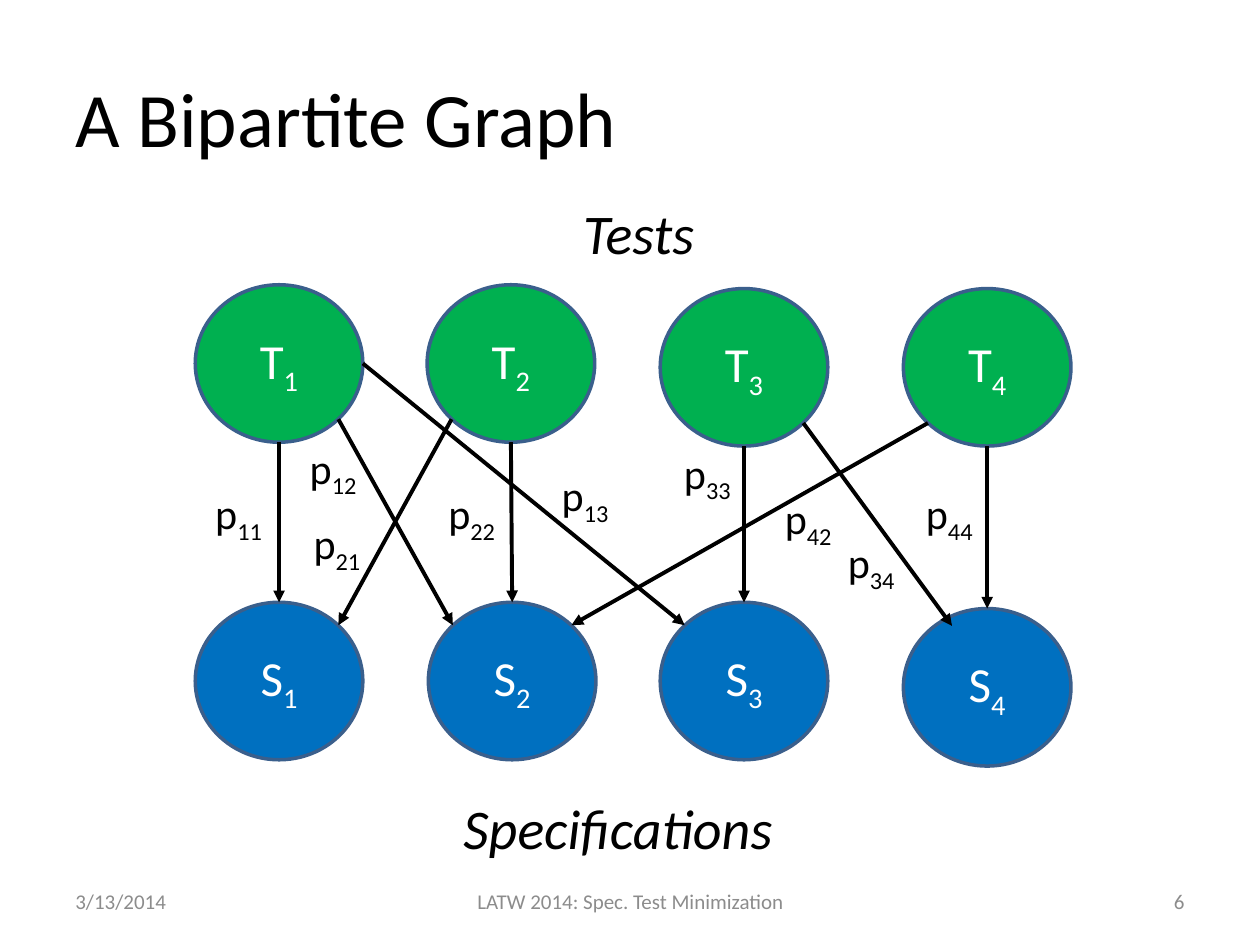
from lxml import etree
from pptx import Presentation
from pptx.dml.color import RGBColor
from pptx.enum import shapes, text
from pptx.oxml import ns
from pptx.util import Inches, Pt

BLACK = RGBColor(0x00, 0x00, 0x00)
WHITE = RGBColor(0xFF, 0xFF, 0xFF)
GRAY = RGBColor(0x8C, 0x8C, 0x8C)
GREEN = RGBColor(0x00, 0xB0, 0x50)
BLUE = RGBColor(0x00, 0x70, 0xC0)
OUTLINE = RGBColor(0x3A, 0x5F, 0x8C)
FONT = "Calibri"
LEFT, CENTER, RIGHT = text.PP_ALIGN.LEFT, text.PP_ALIGN.CENTER, text.PP_ALIGN.RIGHT

# Content: node name -> left, top
TITLE = "A Bipartite Graph"
NODES = {
    "T1": (1.55, 2.26), "T2": (3.39, 2.26), "T3": (5.24, 2.29), "T4": (7.17, 2.29),
    "S1": (1.55, 4.78), "S2": (3.4, 4.78), "S3": (5.24, 4.78), "S4": (7.17, 4.83),
}
NODE_FILLS = {"T": GREEN, "S": BLUE}
NODE_W, NODE_H = 1.33, 1.25

# Points on a node, as fractions of its width and height
DIAGONAL = 0.146
SITES = {
    "top": (0.5, 0), "bottom": (0.5, 1), "right": (1, 0.5),
    "top left": (DIAGONAL, DIAGONAL), "top right": (1 - DIAGONAL, DIAGONAL),
    "bottom left": (DIAGONAL, 1 - DIAGONAL),
    "bottom right": (1 - DIAGONAL, 1 - DIAGONAL),
    "inner left": (0.29, 0.11),
}

# Test, its site, specification, its site, left and top of the label
EDGES = [
    ("T1", "bottom", "S1", "top", 1.61, 3.82),
    ("T2", "bottom", "S2", "top", 3.46, 3.82),
    ("T3", "bottom", "S3", "top", 5.33, 3.5),
    ("T4", "bottom", "S4", "top", 7.25, 3.82),
    ("T1", "bottom right", "S2", "top left", 2.36, 3.46),
    ("T1", "right", "S3", "top left", 4.36, 3.68),
    ("T2", "bottom left", "S1", "top right", 2.39, 4.06),
    ("T3", "bottom right", "S4", "inner left", 6.63, 4.21),
    ("T4", "bottom left", "S2", "top right", 6.13, 3.86),
]
HEADINGS = [("Tests", 4.53, 1.53, 1.22), ("Specifications", 3.58, 6.25, 2.76)]
FOOTERS = [
    ("3/13/2014", 0.5, 2.33, LEFT),
    ("LATW 2014: Spec. Test Minimization", 3.42, 3.17, CENTER),
    ("6", 7.17, 2.33, RIGHT),
]


def write(frame, words, size, color, align=LEFT, subscript="", italic=None):
    para = frame.paragraphs[0]
    para.alignment = align
    for part in filter(None, (words, subscript)):
        span = para.add_run()
        span.text = part
        span.font.name, span.font.size = FONT, Pt(size)
        span.font.color.rgb, span.font.italic = color, italic
    if subscript:
        span._r.get_or_add_rPr().set("baseline", "-25000")


def add_box(page, left, top, width, height, wrap=True, grow=True):
    box = page.shapes.add_textbox(*map(Inches, (left, top, width, height)))
    frame = box.text_frame
    frame.word_wrap = wrap
    if grow:
        frame.auto_size = text.MSO_AUTO_SIZE.SHAPE_TO_FIT_TEXT
    else:
        frame.vertical_anchor = text.MSO_ANCHOR.MIDDLE
    return frame


def add_node(page, name, left, top):
    node = page.shapes.add_shape(
        shapes.MSO_SHAPE.OVAL, *map(Inches, (left, top, NODE_W, NODE_H)))
    node.shadow.inherit = False
    node.fill.solid()
    node.fill.fore_color.rgb = NODE_FILLS[name[0]]
    node.line.color.rgb, node.line.width = OUTLINE, Pt(2)
    node.text_frame.vertical_anchor = text.MSO_ANCHOR.MIDDLE
    write(node.text_frame, name[0], 28, WHITE, CENTER, name[1])


def site_point(name, site):
    (left, top), (across, down) = NODES[name], SITES[site]
    return Inches(left + across * NODE_W), Inches(top + down * NODE_H)


def add_arrow(page, start, end):
    arrow = page.shapes.add_connector(shapes.MSO_CONNECTOR.STRAIGHT, *start, *end)
    arrow.line.color.rgb, arrow.line.width = BLACK, Pt(2.25)
    properties = arrow._element.spPr
    etree.SubElement(properties.get_or_add_ln(), ns.qn("a:tailEnd"), type="triangle")
    etree.SubElement(properties, ns.qn("a:effectLst"))


def main():
    deck = Presentation()
    deck.slide_width, deck.slide_height = Inches(10), Inches(7.5)
    page = deck.slides.add_slide(deck.slide_layouts[5])

    # Title
    title = page.shapes.title
    title.left, title.top = Inches(0.5), Inches(0.3)
    title.width, title.height = Inches(9), Inches(1.25)
    title.text_frame.vertical_anchor = text.MSO_ANCHOR.MIDDLE
    write(title.text_frame, TITLE, 44, BLACK)

    # Footer line
    for words, left, width, align in FOOTERS:
        frame = add_box(page, left, 6.95, width, 0.4, grow=False)
        write(frame, words, 12, GRAY, align)

    # Graph
    for name, (left, top) in NODES.items():
        add_node(page, name, left, top)
    for test, leave, target, enter, left, top in EDGES:
        add_arrow(page, site_point(test, leave), site_point(target, enter))
        frame = add_box(page, left, top, 0.61, 0.5, wrap=False)
        write(frame, "p", 24, BLACK, subscript=test[1] + target[1])

    # Row headings
    for words, left, top, width in HEADINGS:
        write(add_box(page, left, top, width, 0.64), words, 32, BLACK, italic=True)

    deck.save("out.pptx")


if __name__ == "__main__":
    main()
